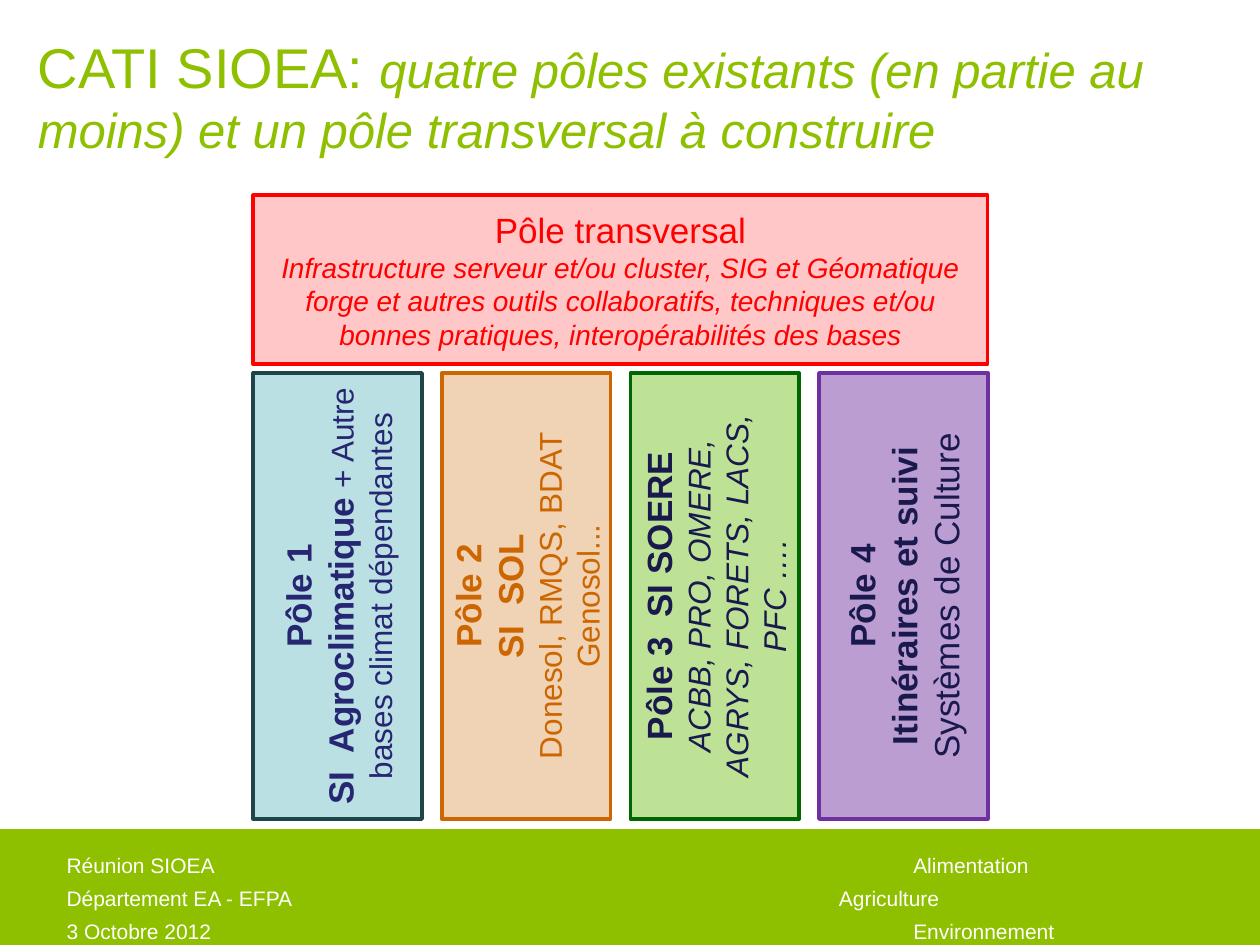
from pptx import Presentation
from pptx.dml.color import RGBColor
from pptx.enum.shapes import MSO_SHAPE
from pptx.enum.text import MSO_ANCHOR, PP_ALIGN
from pptx.oxml.ns import qn
from pptx.util import Inches, Pt
from lxml.etree import SubElement


def paint(fill, color, alpha=100):
    fill.solid()
    fill.fore_color.rgb = RGBColor.from_string(color)
    if alpha < 100:
        node = fill._xPr.find(qn("a:solidFill"))[0]
        SubElement(node, qn("a:alpha")).set("val", str(alpha * 1000))


def write(para, runs, color, align=PP_ALIGN.LEFT):
    """Each run is (text, size, style); style holds b and/or i."""
    para.alignment = align
    for text, size, style in runs:
        for num, line in enumerate(text.split("\n")):
            if num:
                para.add_line_break()
            if not line:
                continue
            run = para.add_run()
            run.text = line
            font = run.font
            font.name, font.size = "Arial", Pt(size)
            font.bold, font.italic = "b" in style, "i" in style
            paint(font.fill, color)


GREEN, RED, WHITE = "8EC000", "FF0000", "FFFFFF"

deck = Presentation()
deck.slide_width, deck.slide_height = Inches(10), Inches(7.5)
slide = deck.slides.add_slide(deck.slide_layouts[5])
shapes = slide.shapes

# Title
title = shapes.title
title.left, title.top = Inches(0.2), Inches(0.29)
title.width, title.height = Inches(9.53), Inches(0.93)
title.text_frame.vertical_anchor = MSO_ANCHOR.MIDDLE
write(title.text_frame.paragraphs[0], [
    ("CATI SIOEA: ", 32, ""),
    ("quatre pôles existants (en partie au moins) et un pôle transversal à construire", 28, "i"),
], GREEN)

# Footer band
band = shapes.add_shape(MSO_SHAPE.RECTANGLE, 0, Inches(6.58), Inches(10), Inches(0.92))
band.shadow.inherit = False
paint(band.fill, GREEN)
band.line.fill.background()

# Footer texts: left, width, lines with their indent
notes = [
    (6.56, 2.03, [("Alimentation", 0.59), ("Agriculture", 0), ("Environnement", 0.59)]),
    (0.43, 2.68, [("Réunion SIOEA", 0), ("Département EA - EFPA", 0), ("3 Octobre 2012", 0)]),
]
for left, width, lines in notes:
    box = shapes.add_textbox(Inches(left), Inches(6.66), Inches(width), Inches(0.89))
    frame = box.text_frame
    frame.word_wrap = True
    for num, (text, indent) in enumerate(lines):
        para = frame.add_paragraph() if num else frame.paragraphs[0]
        para.line_spacing = 1.3
        para._p.get_or_add_pPr().set("marL", str(Inches(indent)))
        write(para, [(text, 12, "")], WHITE)

# Poles: fill, alpha, line, text colour, paragraphs
poles = [
    (RED, 22, RED, RED, [
        [("Pôle transversal\n", 20, ""),
         ("Infrastructure serveur et/ou cluster, SIG et Géomatique", 16, "i")],
        [("forge et autres outils collaboratifs, techniques et/ou bonnes pratiques, "
          "interopérabilités des bases", 16, "i")]]),
    ("BBE0E3", 100, "1E4649", "262673", [
        [("Pôle 1\nSI  Agroclimatique ", 20, "b"),
         ("+ Autre bases climat dépendantes", 18, "")]]),
    ("CC6600", 29, "CC6600", "CC6600", [
        [("Pôle 2\nSI  SOL\n", 20, "b"), ("Donesol, RMQS, BDAT Genosol...", 18, "")]]),
    ("92D050", 60, "006600", "19194D", [
        [("Pôle 3  SI SOERE\n", 20, "b"),
         ("ACBB, PRO, OMERE, AGRYS, FORETS, LACS, PFC ….", 18, "i")]]),
    ("7030A0", 47, "7030A0", "19194D", [
        [("Pôle 4\nItinéraires et suivi ", 20, "b"), ("Systèmes de Culture", 20, "")]]),
]
start, wide, tall, thick = 2.01, 5.83, 3.54, 1.34
step = (wide - thick) / 3
for num, (fill, alpha, line, color, paras) in enumerate(poles):
    if num == 0:
        place = (start, 1.55, wide, thick)
    else:
        mid = start + thick / 2 + (num - 1) * step
        place = (mid - tall / 2, 4.06, tall, thick)
    pole = shapes.add_shape(MSO_SHAPE.RECTANGLE, *[Inches(v) for v in place])
    pole.rotation = 270 if num else 0
    pole.shadow.inherit = False
    paint(pole.fill, fill, alpha)
    paint(pole.line.fill, line)
    pole.line.width = Pt(2)
    frame = pole.text_frame
    frame.word_wrap = True
    frame.vertical_anchor = MSO_ANCHOR.MIDDLE
    for row, runs in enumerate(paras):
        para = frame.add_paragraph() if row else frame.paragraphs[0]
        write(para, runs, color, PP_ALIGN.CENTER)

deck.save("out.pptx")
